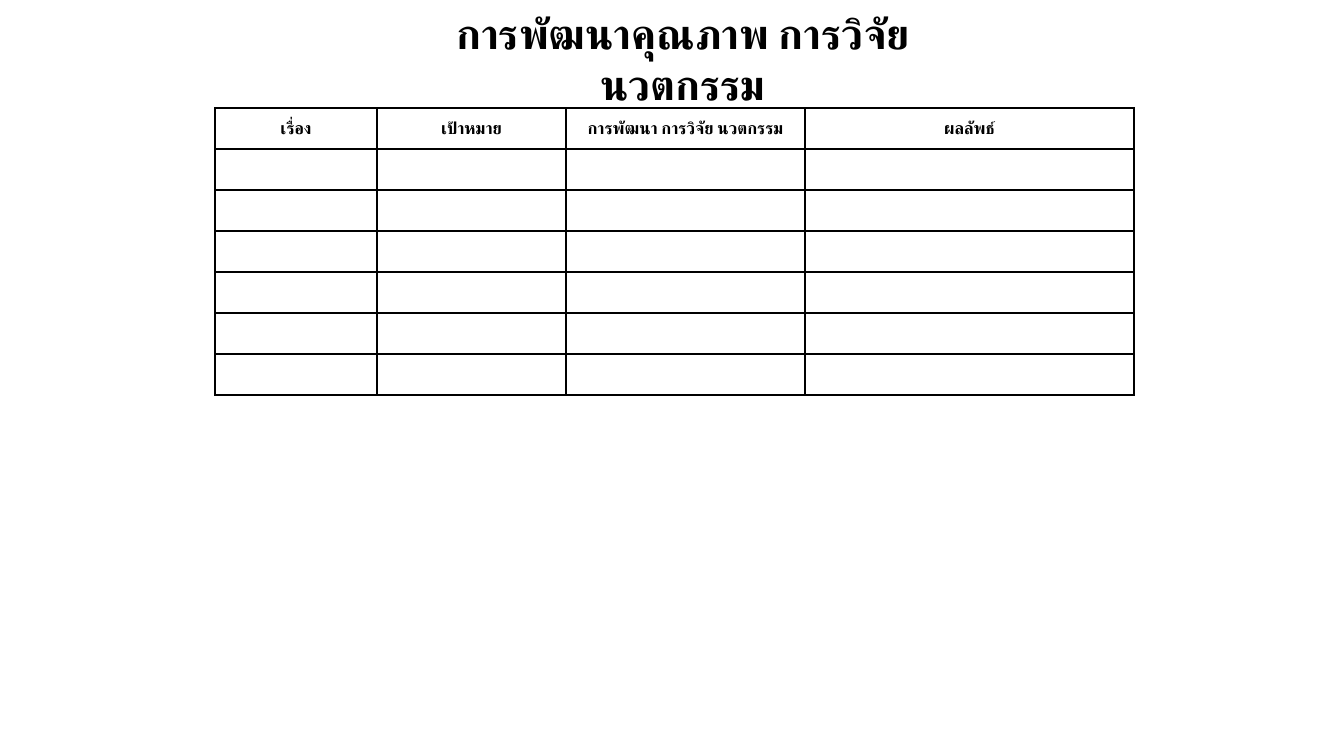
from lxml.etree import SubElement
from pptx import Presentation
from pptx.dml.color import RGBColor
from pptx.enum.text import MSO_ANCHOR, MSO_AUTO_SIZE, PP_ALIGN
from pptx.oxml.ns import qn
from pptx.util import Emu, Pt

EMU_PER_PX = 914400 / 100.8
BLACK = "000000"
WHITE = "FFFFFF"
TITLE = "การพัฒนาคุณภาพ การวิจัย นวตกรรม"
HEADERS = ["เรื่อง", "เป้าหมาย", "การพัฒนา การวิจัย นวตกรรม", "ผลลัพธ์"]
COLUMN_WIDTHS = [162, 189, 239, 329]
ROW_COUNT = 7
ROW_HEIGHT = 41


def px(n):
    """Turn pixels into EMU."""
    return Emu(round(n * EMU_PER_PX))


def color(value):
    """Turn a hex string into a colour."""
    return RGBColor.from_string(value)


def format_paragraph(p, font_name, size):
    """Centre a paragraph and set its bold black font."""
    p.alignment = PP_ALIGN.CENTER
    font = p.font
    font.name = font_name
    font.size = Pt(size)
    font.bold = True
    font.color.rgb = color(BLACK)
    props = p._p.get_or_add_pPr().find(qn("a:defRPr"))
    SubElement(props, qn("a:cs"), typeface=font_name)


def set_borders(cell):
    """Draw a one-point black line on each side of a cell."""
    props = cell._tc.get_or_add_tcPr()
    for i, side in enumerate(("lnL", "lnR", "lnT", "lnB")):
        line = SubElement(props, qn(f"a:{side}"), w=str(Pt(1)))
        fill = SubElement(line, qn("a:solidFill"))
        SubElement(fill, qn("a:srgbClr"), val=BLACK)
        props.insert(i, line)


def add_title(s):
    """Place and format the slide title."""
    sp = s.shapes.title
    sp.left, sp.top, sp.width, sp.height = px(432), px(29), px(502), px(58)
    tf = sp.text_frame
    tf.text = TITLE
    tf.word_wrap = True
    tf.auto_size = MSO_AUTO_SIZE.NONE
    tf.vertical_anchor = MSO_ANCHOR.MIDDLE
    tf.margin_left = tf.margin_right = px(7)
    tf.margin_top = tf.margin_bottom = px(4)
    format_paragraph(tf.paragraphs[0], "Calibri", 30)


def add_grid(s):
    """Add the table with its header and empty rows."""
    table = s.shapes.add_table(
        ROW_COUNT, len(HEADERS), px(215), px(108),
        px(sum(COLUMN_WIDTHS)), px(ROW_COUNT * ROW_HEIGHT)).table
    for column, width in zip(table.columns, COLUMN_WIDTHS):
        column.width = px(width)
    for row in table.rows:
        row.height = px(ROW_HEIGHT)
    for cell in table.iter_cells():
        cell.fill.solid()
        cell.fill.fore_color.rgb = color(WHITE)
        cell.vertical_anchor = MSO_ANCHOR.MIDDLE
        cell.margin_left = cell.margin_right = px(6)
        cell.margin_top = cell.margin_bottom = 0
        set_borders(cell)
    for i, header in enumerate(HEADERS):
        cell = table.cell(0, i)
        cell.text = header
        format_paragraph(cell.text_frame.paragraphs[0], "Cabin", 12)


def main():
    """Build the slide and save it."""
    prs = Presentation()
    prs.slide_width, prs.slide_height = px(1344), px(756)
    s = prs.slides.add_slide(prs.slide_layouts[5])
    add_title(s)
    add_grid(s)
    prs.save("out.pptx")


if __name__ == "__main__":
    main()
